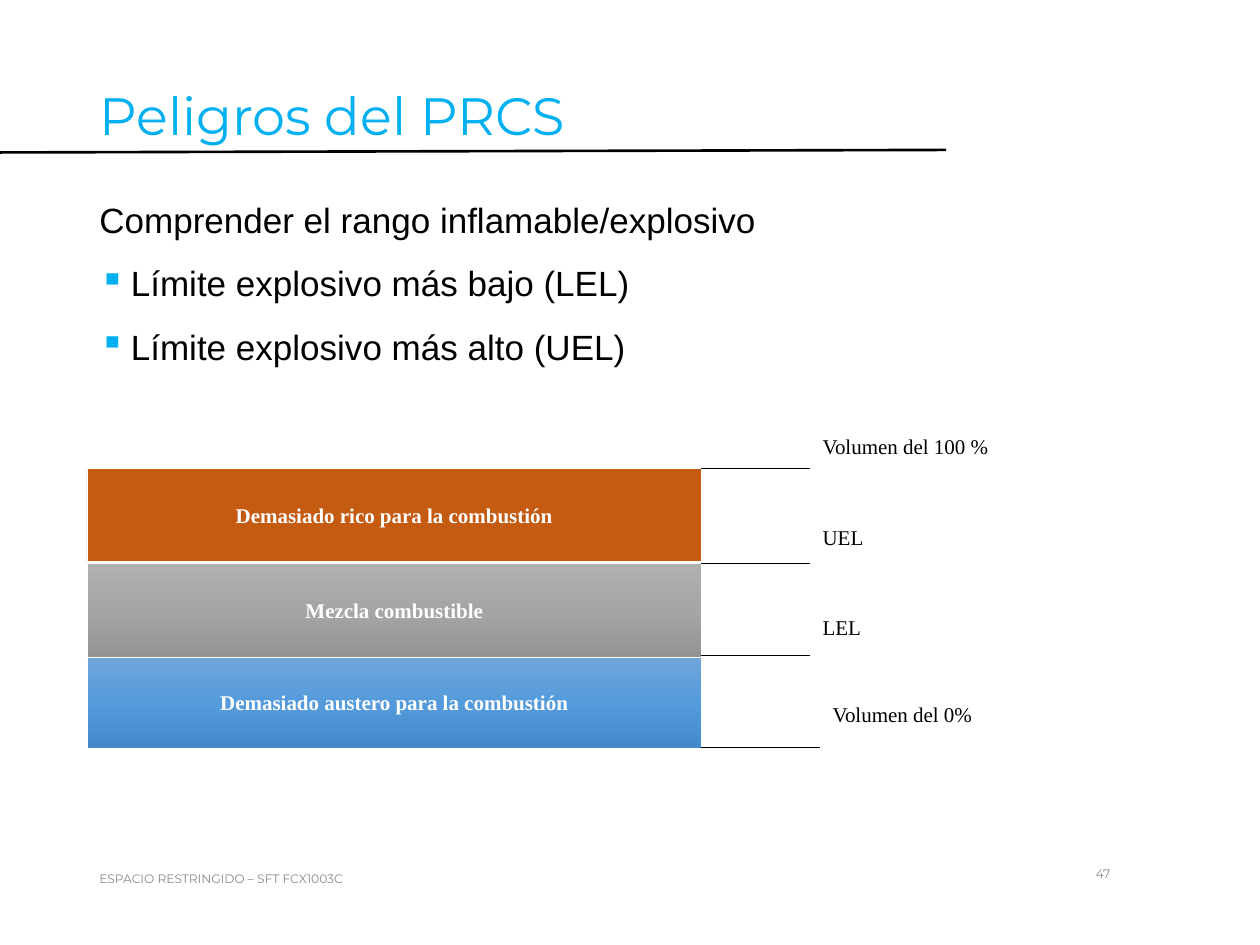
from copy import deepcopy
from dataclasses import dataclass

from lxml import etree
from pptx import Presentation
from pptx.dml.color import RGBColor
from pptx.enum.shapes import MSO_CONNECTOR, MSO_SHAPE
from pptx.enum.text import MSO_ANCHOR, PP_ALIGN
from pptx.oxml.ns import qn
from pptx.util import Inches, Pt

RECTANGLE = MSO_SHAPE.RECTANGLE
STRAIGHT = MSO_CONNECTOR.STRAIGHT
TOP, MIDDLE = MSO_ANCHOR.TOP, MSO_ANCHOR.MIDDLE
LEFT, CENTER = PP_ALIGN.LEFT, PP_ALIGN.CENTER


@dataclass(frozen=True)
class Theme:
    accent: RGBColor = RGBColor.from_string("00B0F0")
    black: RGBColor = RGBColor.from_string("000000")
    white: RGBColor = RGBColor.from_string("FFFFFF")
    muted: RGBColor = RGBColor.from_string("898989")
    rich: tuple = ("C55A11",)
    mixture: tuple = ("AFAFAF", "A5A5A5", "939393")
    lean: tuple = ("71A6DB", "559BDB", "448ACA")
    heading_font: str = "Montserrat"
    body_font: str = "Arial"
    diagram_font: str = "Times New Roman"
    title_size: Pt = Pt(30)
    body_size: Pt = Pt(20)
    diagram_size: Pt = Pt(12)
    footer_size: Pt = Pt(7)


theme = Theme()
TITLE = {"name": theme.heading_font, "size": theme.title_size, "color": theme.accent}
BODY = {"name": theme.body_font, "size": theme.body_size, "color": theme.black}
FOOTER = {"name": theme.heading_font, "size": theme.footer_size, "color": theme.muted}
LABEL = {"name": theme.diagram_font, "size": theme.diagram_size, "color": theme.black}
BAND = {**LABEL, "color": theme.white, "bold": True}


def write(shape, lines, style, align=LEFT, anchor=TOP):
    frame = shape.text_frame
    frame.word_wrap = True
    frame.vertical_anchor = anchor
    for index, line in enumerate(lines):
        paragraph = frame.paragraphs[0] if index == 0 else frame.add_paragraph()
        paragraph.alignment = align
        run = paragraph.add_run()
        run.text = line
        for key, value in style.items():
            if key == "color":
                run.font.color.rgb = value
            else:
                setattr(run.font, key, value)
    return frame


def draw_line(start, end, width):
    line = slide.shapes.add_connector(STRAIGHT, *map(Inches, start + end))
    line.line.color.rgb = theme.black
    line.line.width = Pt(width)
    etree.SubElement(line._element.spPr, qn("a:effectLst"))


presentation = Presentation()
presentation.slide_width = Inches(10)
presentation.slide_height = Inches(7.5)
slide = presentation.slides.add_slide(presentation.slide_layouts[6])
margin = 0.69

# Title and its rule
draw_line((0, 1.21), (7.51, 1.19), 1.5)
title = slide.shapes.add_textbox(*map(Inches, (margin, 0.67, 6.82, 0.84)))
write(title, ["Peligros del PRCS"], TITLE).paragraphs[0].line_spacing = 0.9

# Lead line and bullets
body = slide.shapes.add_textbox(*map(Inches, (margin, 1.53, 6.89, 5.1)))
body_frame = write(body, [
    "Comprender el rango inflamable/explosivo",
    "Límite explosivo más bajo (LEL)",
    "Límite explosivo más alto (UEL)",
], BODY)
for paragraph in body_frame.paragraphs:
    paragraph.space_after = Pt(6)
for paragraph in body_frame.paragraphs[1:]:
    paragraph.space_before = Pt(6)
    properties = paragraph._p.get_or_add_pPr()
    properties.set("marL", str(Inches(0.25)))
    properties.set("indent", str(-Inches(0.25)))
    bullet_color = etree.SubElement(properties, qn("a:buClr"))
    etree.SubElement(bullet_color, qn("a:srgbClr"), val=str(theme.accent))
    etree.SubElement(properties, qn("a:buChar"), char="▪")

# Footer and slide number
for text, place, align in (
    ("ESPACIO RESTRINGIDO – SFT FCX1003C", (margin, 6.77, 6, 0.4), LEFT),
    ("47", (7.51, 6.73, 2.49, 0.4), CENTER),
):
    footer = slide.shapes.add_textbox(*map(Inches, place))
    write(footer, [text], FOOTER, align, MIDDLE)

# Bands of the flammable range
for text, top, height, colors in (
    ("Demasiado rico para la combustión", 3.72, 0.74, theme.rich),
    ("Demasiado austero para la combustión", 5.2, 0.74, theme.lean),
    ("Mezcla combustible", 4.47, 0.75, theme.mixture),
):
    band = slide.shapes.add_shape(RECTANGLE, *map(Inches, (margin, top, 4.88, height)))
    band.shadow.inherit = False
    band.line.color.rgb = theme.white
    band.line.width = Pt(0.5)
    if len(colors) == 1:
        band.fill.solid()
        band.fill.fore_color.rgb = RGBColor.from_string(colors[0])
    else:
        band.fill.gradient()
        band.fill.gradient_angle = 270
        first_stop = band._element.spPr.find(".//" + qn("a:gs"))
        first_stop.addnext(deepcopy(first_stop))
        for index, (stop, color) in enumerate(zip(band.fill.gradient_stops, colors)):
            stop.position = index / 2
            stop.color.rgb = RGBColor.from_string(color)
    write(band, [text], BAND, CENTER, MIDDLE)

# Limit lines
for level in (3.72, 4.47, 5.2, 5.93):
    draw_line((5.56, level), (6.51, level), 0.5)

# Limit labels, whose white boxes cover the line ends
for text, left, top, width in (
    ("Volumen del 100\u00a0%".replace("\u00a0", " "), 6.43, 3.39, 1.61),
    ("UEL", 6.43, 4.11, 1.32),
    ("LEL", 6.43, 4.83, 1.32),
    ("Volumen del 0%", 6.51, 5.52, 1.53),
):
    label = slide.shapes.add_shape(RECTANGLE, *map(Inches, (left, top, width, 0.61)))
    label.shadow.inherit = False
    label.fill.solid()
    label.fill.fore_color.rgb = theme.white
    label.line.fill.background()
    write(label, [text], LABEL)

presentation.save("out.pptx")
